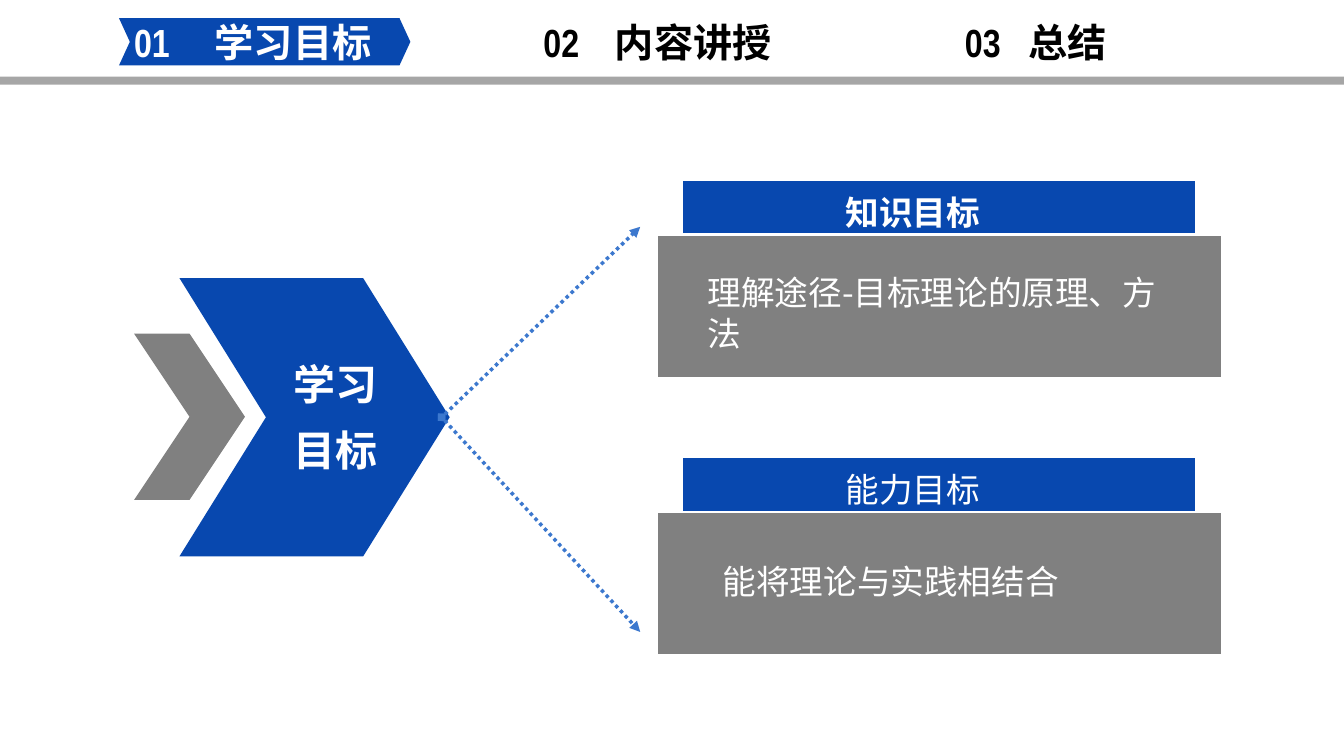
from lxml import etree
from pptx import Presentation
from pptx import util as u
from pptx.dml.color import RGBColor
from pptx.enum import dml, shapes, text
from pptx.oxml import ns

BLUE = RGBColor(0x08, 0x48, 0xAF)
ARROW_BLUE = RGBColor(0x3C, 0x78, 0xCE)
GRAY = RGBColor(0x80, 0x80, 0x80)
RULE_GRAY = RGBColor(0xA6, 0xA6, 0xA6)
WHITE = RGBColor(0xFF, 0xFF, 0xFF)
BLACK = RGBColor(0, 0, 0)
CJK = "Noto Sans CJK SC"
NARROW = "Arial Narrow"


class GoalPage:
    """Draws the elements of one page in a shared style."""

    def __init__(self, deck):
        self.page = deck.slides.add_slide(deck.slide_layouts[5])

    def shape(self, kind, left, top, width, height, fill, adjust=None, outlined=False):
        box = self.page.shapes.add_shape(
            kind, u.Inches(left), u.Inches(top), u.Inches(width), u.Inches(height))
        box.shadow.inherit = False
        box.fill.solid()
        box.fill.fore_color.rgb = fill
        if adjust is not None:
            box.adjustments[0] = adjust
        if outlined:
            box.line.color.rgb = WHITE
            box.line.width = u.Pt(2)
        else:
            box.line.fill.background()
        return box

    def style(self, para, size, color, bold, latin):
        font = para.font
        font.size, font.bold, font.name = u.Pt(size), bold, latin
        font.color.rgb = color
        east_asian = etree.SubElement(font._element, ns.qn("a:ea"))
        east_asian.set("typeface", CJK)

    def label(self, wording, left, top, width, height, size=24, bold=False,
              spacing=None, latin=CJK):
        box = self.page.shapes.add_textbox(
            u.Inches(left), u.Inches(top), u.Inches(width), u.Inches(height))
        box.text_frame.word_wrap = True
        para = box.text_frame.paragraphs[0]
        para.text = wording
        if spacing:
            para.line_spacing = spacing
        self.style(para, size, WHITE, bold, latin)

    def heading(self, number, wording, left, width, gap, color, is_title=False):
        """A section number and its name, set apart by a tab stop."""
        place = [u.Inches(value) for value in (left, 0.18, width, 0.47)]
        if is_title:
            box = self.page.shapes.title
            box.left, box.top, box.width, box.height = place
        else:
            box = self.page.shapes.add_textbox(*place)
        frame = box.text_frame
        frame.word_wrap = True
        frame.auto_size = text.MSO_AUTO_SIZE.NONE
        frame.vertical_anchor = text.MSO_ANCHOR.MIDDLE
        frame.margin_left = frame.margin_right = frame.margin_top = frame.margin_bottom = 0
        para = frame.paragraphs[0]
        para.text = f"{number}\t{wording}"
        para.alignment = text.PP_ALIGN.LEFT
        para.line_spacing = 1.0
        self.style(para, 28, color, True, NARROW)
        tabs = etree.Element(ns.qn("a:tabLst"))
        etree.SubElement(tabs, ns.qn("a:tab"), pos=str(u.Inches(gap)), algn="l")
        para.font._element.addprevious(tabs)

    def arrow(self, start, end):
        link = self.page.shapes.add_connector(
            shapes.MSO_CONNECTOR.STRAIGHT, *map(u.Inches, start + end))
        link.line.color.rgb = ARROW_BLUE
        link.line.width = u.Pt(2.5)
        link.line.dash_style = dml.MSO_LINE.ROUND_DOT
        outline = link.line._get_or_add_ln()
        etree.SubElement(outline, ns.qn("a:headEnd"), type="diamond")
        etree.SubElement(outline, ns.qn("a:tailEnd"), type="triangle")
        etree.SubElement(link._element.spPr, ns.qn("a:effectLst"))

    def goal(self, top, name, bold, latin):
        """A blue name bar above a gray panel."""
        rectangle = shapes.MSO_SHAPE.RECTANGLE
        self.shape(rectangle, 6.51, top + 0.55, 5.61, 1.42, GRAY, outlined=True)
        self.shape(rectangle, 6.76, top, 5.11, 0.55, BLUE, outlined=True)
        self.label(name, 8.29, top - 0.05, 2.36, 0.62, bold=bold, spacing=1.3, latin=latin)


def main():
    deck = Presentation()
    deck.slide_width, deck.slide_height = u.Inches(13.33), u.Inches(7.5)
    goals = GoalPage(deck)
    chevron = shapes.MSO_SHAPE.CHEVRON

    # Section bar, with the marker behind the title
    goals.shape(shapes.MSO_SHAPE.RECTANGLE, 0, 0.76, 13.33, 0.08, RULE_GRAY)
    marker = goals.shape(chevron, 1.18, 0.18, 2.89, 0.47, BLUE, 0.23)
    goals.page.shapes.title._element.addprevious(marker._element)
    goals.heading("01", "学习目标", 1.33, 3.14, 0.8, WHITE, is_title=True)
    goals.heading("02", "内容讲授", 5.39, 3.77, 0.71, BLACK)
    goals.heading("03", "总结", 9.57, 1.88, 0.63, BLACK)

    # Topic chevrons
    goals.shape(chevron, 1.78, 2.76, 2.68, 2.76, BLUE, 0.32)
    goals.shape(chevron, 1.33, 3.31, 1.1, 1.65, GRAY, 0.5)
    goals.label("学习目标", 2.81, 3.36, 1.26, 1.41, size=30, bold=True, spacing=1.3)

    # Arrows from the topic to each goal
    for end in ((6.35, 2.25), (6.35, 6.27)):
        goals.arrow((4.38, 4.14), end)

    # Goals
    goals.goal(1.78, "知识目标", True, "Arial")
    goals.label("理解途径-目标理论的原理、方法", 6.92, 2.65, 4.8, 0.91)
    goals.goal(4.53, "能力目标", False, CJK)
    goals.label("能将理论与实践相结合", 7.07, 5.52, 4.8, 0.5)

    deck.save("out.pptx")


if __name__ == "__main__":
    main()
